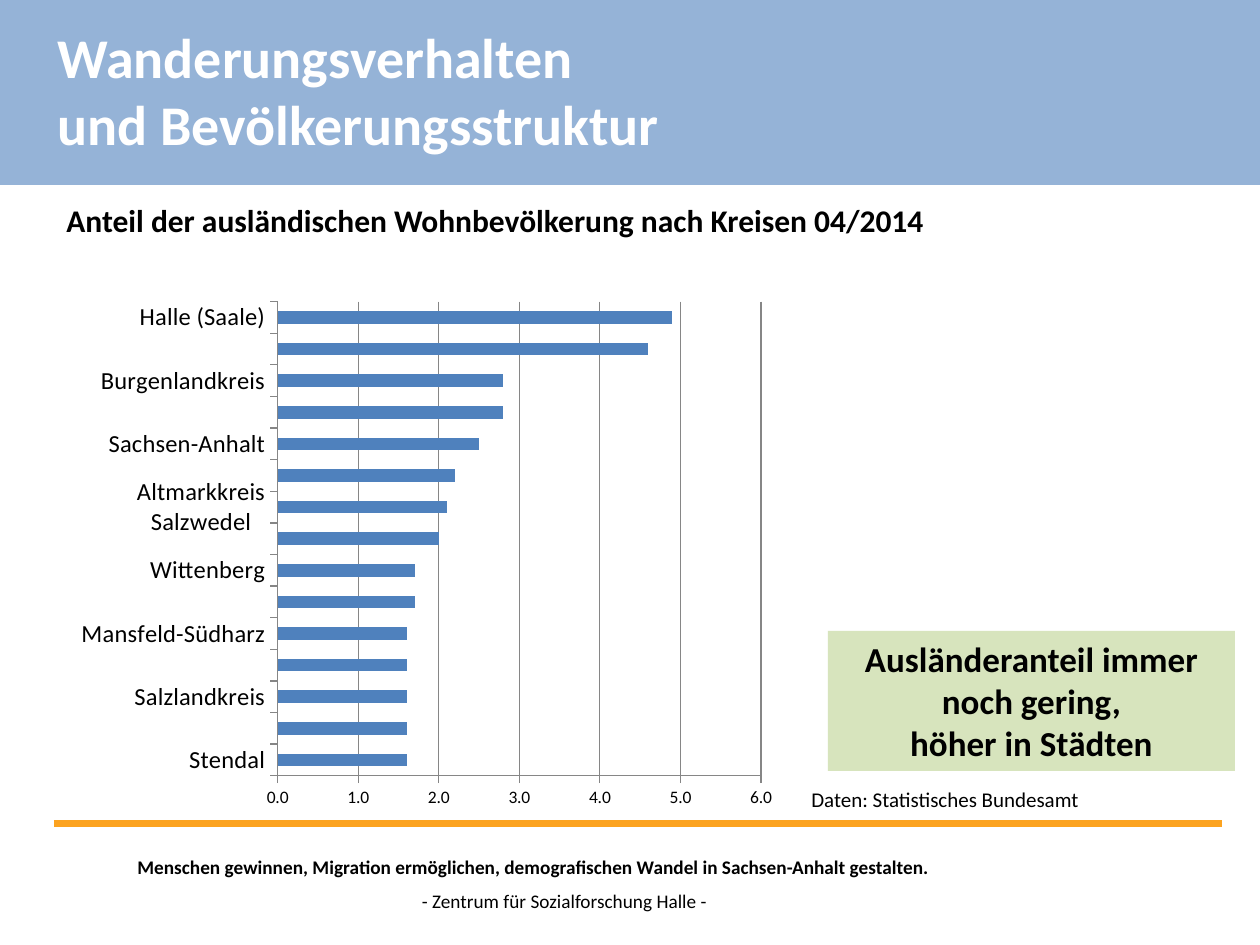
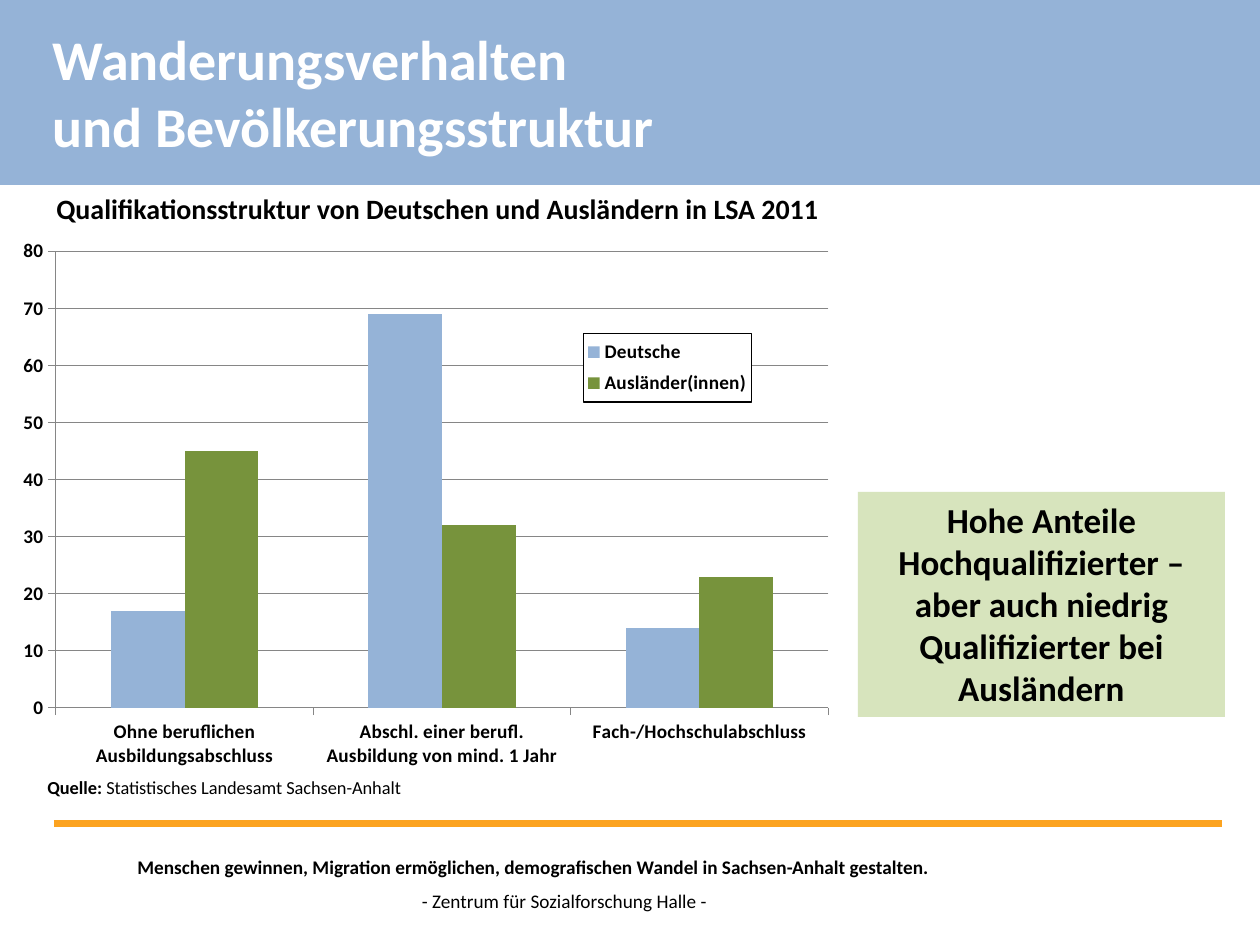
"""Build two slides on migration and population structure in Sachsen-Anhalt."""
from lxml import etree
from pptx import Presentation, util as u
from pptx.chart.data import CategoryChartData
from pptx.dml.color import RGBColor
from pptx.enum import chart as charts, shapes, text
from pptx.oxml import parse_xml
from pptx.oxml.ns import nsdecls, qn


class Theme:
    font = "Calibri"
    black, white = RGBColor(0, 0, 0), RGBColor(255, 255, 255)
    band, rule = RGBColor.from_string("95B3D7"), RGBColor.from_string("FCA320")
    callout, axis = RGBColor.from_string("D7E4BD"), RGBColor.from_string("868686")
    blue, green = RGBColor.from_string("4F81BD"), RGBColor.from_string("77933C")
    title_size, callout_size, footer_size = 32, 20, 11


PX = 914400 / 126
LEFT, CENTER = text.PP_ALIGN.LEFT, text.PP_ALIGN.CENTER


def add_text(slide, box, paragraphs, size, bold=False, color=Theme.black, align=LEFT, fill=None, wrap=True):
    """Add a text box whose paragraphs are lists of (text, bold) runs or plain strings."""
    left, top, width, height = (u.Emu(round(side * PX)) for side in box)
    if fill is None:
        shape = slide.shapes.add_textbox(left, top, width, height)
    else:
        shape = slide.shapes.add_shape(shapes.MSO_SHAPE.RECTANGLE, left, top, width, height)
        shape.shadow.inherit = False
        shape.fill.solid()
        shape.fill.fore_color.rgb = fill
        shape.line.fill.background()
    frame = shape.text_frame
    frame.word_wrap = wrap
    frame.vertical_anchor = text.MSO_ANCHOR.TOP
    for index, content in enumerate(paragraphs):
        paragraph = frame.add_paragraph() if index else frame.paragraphs[0]
        paragraph.alignment = align
        paragraph.font.name, paragraph.font.size = Theme.font, u.Pt(size)
        paragraph.font.bold, paragraph.font.color.rgb = bold, color
        if isinstance(content, str):
            paragraph.add_run().text = content
        else:
            for wording, run_bold in content:
                run = paragraph.add_run()
                run.text, run.font.bold = wording, run_bold


def set_layout(parent, index, fractions, inner=False):
    """Fix the place of a plot area or legend as fractions of the chart."""
    for old in parent.findall(qn("c:layout")):
        parent.remove(old)
    layout = etree.Element(qn("c:layout"))
    manual = etree.SubElement(layout, qn("c:manualLayout"))
    settings = [("layoutTarget", "inner")] if inner else []
    settings += [("xMode", "edge"), ("yMode", "edge"), *zip("xywh", fractions)]
    for tag, value in settings:
        etree.SubElement(manual, qn(f"c:{tag}")).set("val", str(value))
    parent.insert(index, layout)


PAGES = [
    dict(
        title_at=(45, 16),
        texts=[
            ((54, 195, 912, 50), ["Anteil der ausländischen Wohnbevölkerung nach Kreisen 04/2014"], 18, True),
            ((799, 780, 377, 38), ["Daten: Statistisches Bundesamt"], 12),
        ],
        callout=((828, 631, 407, 140), ["Ausländeranteil immer noch gering,", "höher in Städten"]),
        chart_type=charts.XL_CHART_TYPE.BAR_STACKED,
        chart_box=(54, 275, 753, 534),
        plot=(0.297, 0.05, 0.642, 0.888),
        categories=["Stendal", "Jerichower Land", "Salzlandkreis", "Harz", "Mansfeld-Südharz",
                    "Börde", "Wittenberg", "Saalekreis", "Altmarkkreis Salzwedel",
                    "Anhalt-Bitterfeld", "Sachsen-Anhalt", "Dessau-Roßlau", "Burgenlandkreis",
                    "Magdeburg", "Halle (Saale)"],
        series=[("Ausländeranteil", Theme.blue,
                 [1.6, 1.6, 1.6, 1.6, 1.6, 1.7, 1.7, 2.0, 2.1, 2.2, 2.5, 2.8, 2.8, 4.6, 4.9])],
        sizes=(14, 10), bold=False, overlap=100, maximum=6, step=1, number_format="0.0",
    ),
    dict(
        title_at=(40, 18),
        texts=[
            ((44, 185, 896, 57), ["Qualifikationsstruktur von Deutschen und Ausländern in LSA 2011"], 16, True),
            ((35, 770, 392, 24), [[("Quelle: ", True), ("Statistisches Landesamt Sachsen-Anhalt", False)]], 10.5),
        ],
        callout=((858, 492, 367, 225),
                 ["Hohe Anteile Hochqualifizierter – aber auch niedrig Qualifizierter bei Ausländern"]),
        chart_type=charts.XL_CHART_TYPE.COLUMN_CLUSTERED,
        chart_box=(-15, 224, 885, 560),
        plot=(0.08, 0.049, 0.873, 0.815),
        categories=["Ohne beruflichen Ausbildungsabschluss",
                    "Abschl. einer berufl. Ausbildung von mind. 1 Jahr", "Fach-/Hochschulabschluss"],
        series=[("Deutsche", Theme.band, [17, 69, 14]),
                ("Ausländer(innen)", Theme.green, [45, 32, 23])],
        sizes=(11, 11), bold=True, overlap=0, maximum=80, step=10, number_format="0",
        legend=(0.676, 0.195, 0.19, 0.123),
    ),
]

presentation = Presentation()
presentation.slide_width, presentation.slide_height = round(1260 * PX), round(945 * PX)

for page in PAGES:
    slide = presentation.slides.add_slide(presentation.slide_layouts[6])

    rule = slide.shapes.add_connector(
        shapes.MSO_CONNECTOR.STRAIGHT, *(round(side * PX) for side in (54, 824, 1222, 824)))
    rule.line.color.rgb, rule.line.width = Theme.rule, u.Pt(4)
    etree.SubElement(rule._element.spPr, qn("a:effectLst"))

    add_text(slide, (0, 0, 1260, 185), [], Theme.title_size, fill=Theme.band)
    add_text(slide, (*page["title_at"], 633, 149), ["Wanderungsverhalten", "und Bevölkerungsstruktur"],
             Theme.title_size, True, Theme.white, wrap=False)
    for arguments in page["texts"]:
        add_text(slide, *arguments)
    add_text(slide, *page["callout"], Theme.callout_size, True, align=CENTER, fill=Theme.callout)
    add_text(slide, (40, 849, 987, 59),
             ["Menschen gewinnen, Migration ermöglichen, demografischen Wandel in Sachsen-Anhalt gestalten."],
             Theme.footer_size, True, align=CENTER)
    add_text(slide, (406, 883, 317, 37), ["- Zentrum für Sozialforschung Halle -"],
             Theme.footer_size, align=CENTER, wrap=False)

    data = CategoryChartData(number_format=page["number_format"])
    data.categories = page["categories"]
    for name, _, values in page["series"]:
        data.add_series(name, values)
    box = (round(side * PX) for side in page["chart_box"])
    chart = slide.shapes.add_chart(page["chart_type"], *box, data).chart
    chart.has_title = False
    chart.font.name, chart.font.bold = Theme.font, page["bold"]
    chart.font.size, chart.font.color.rgb = u.Pt(page["sizes"][1]), Theme.black

    plot = chart.plots[0]
    plot.gap_width, plot.overlap, plot.vary_by_categories = 150, page["overlap"], False
    for series, (_, color, _) in zip(plot.series, page["series"]):
        series.format.fill.solid()
        series.format.fill.fore_color.rgb = color
    set_layout(chart._chartSpace.chart.plotArea, 0, page["plot"], inner=True)

    for axis, size in zip((chart.category_axis, chart.value_axis), page["sizes"]):
        axis.major_tick_mark = charts.XL_TICK_MARK.OUTSIDE
        axis.minor_tick_mark = charts.XL_TICK_MARK.NONE
        axis.format.line.color.rgb = Theme.axis
        axis.tick_labels.font.size = u.Pt(size)
    axis = chart.value_axis
    axis.minimum_scale, axis.maximum_scale, axis.major_unit = 0, page["maximum"], page["step"]
    axis.has_major_gridlines = True
    axis.major_gridlines.format.line.color.rgb = Theme.axis
    axis.tick_labels.number_format = page["number_format"]
    axis.tick_labels.number_format_is_linked = False

    chart.has_legend = "legend" in page
    if chart.has_legend:
        chart.legend.position = charts.XL_LEGEND_POSITION.RIGHT
        chart.legend.include_in_layout = False
        legend = chart.legend._element
        set_layout(legend, 1, page["legend"])
        legend.find(qn("c:overlay")).addnext(parse_xml(
            f'<c:spPr {nsdecls("c", "a")}><a:solidFill><a:srgbClr val="{Theme.white}"/></a:solidFill>'
            f'<a:ln w="9525"><a:solidFill><a:srgbClr val="{Theme.black}"/></a:solidFill></a:ln></c:spPr>'))

presentation.save("out.pptx")
